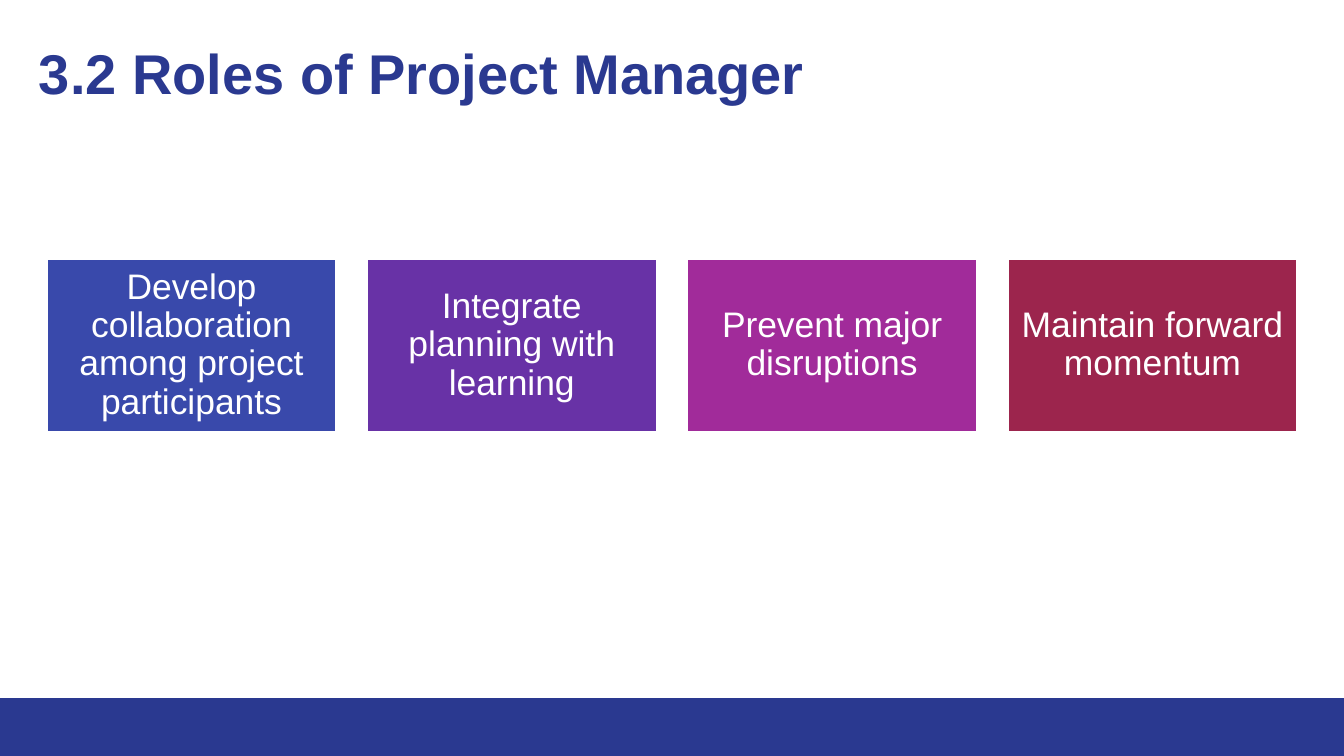
from typing import NamedTuple

from pptx import Presentation
from pptx import util as u
from pptx.dml.color import RGBColor
from pptx.enum import shapes, text

WIDE = 10
HIGH = WIDE * 9 / 16
NAVY, WHITE = "2A3990", "FFFFFF"
EDGE, CARD_W = 0.34, 2.17
FOOT_H = 0.43


class Role(NamedTuple):
    label: str
    fill: str


ROLES = [
    Role("Develop collaboration among project participants", "3949AB"),
    Role("Integrate planning with learning", "6832A6"),
    Role("Prevent major disruptions", "A12B9A"),
    Role("Maintain forward momentum", "9C254D"),
]


def paint(target, color: str) -> None:
    """Give a fill or a line one solid color."""
    target.solid()
    target.fore_color.rgb = RGBColor.from_string(color)


def add_box(slide, left: float, top: float, width: float, height: float, fill: str):
    box = slide.shapes.add_shape(
        shapes.MSO_SHAPE.RECTANGLE,
        u.Inches(left), u.Inches(top), u.Inches(width), u.Inches(height))
    box.shadow.inherit = False
    paint(box.fill, fill)
    box.line.fill.background()
    return box


def set_frame(frame, inset: float, anchor) -> None:
    frame.word_wrap = True
    frame.auto_size = text.MSO_AUTO_SIZE.NONE
    frame.vertical_anchor = anchor
    frame.margin_left = frame.margin_right = u.Inches(inset)
    frame.margin_top = frame.margin_bottom = u.Inches(inset)


def add_run(par, words: str, size: int, color: str, bold: bool = False) -> None:
    run = par.add_run()
    run.text = words
    run.font.name = "Arial"
    run.font.size = u.Pt(size)
    run.font.bold = bold
    paint(run.font.fill, color)


def add_title(slide, words: str) -> None:
    title = slide.shapes.title
    title.left, title.top = u.Inches(0.19), u.Inches(0.19)
    title.width, title.height = u.Inches(9.32), u.Inches(0.66)
    set_frame(title.text_frame, 0.1, text.MSO_ANCHOR.TOP)
    par = title.text_frame.paragraphs[0]
    par.alignment = text.PP_ALIGN.LEFT
    add_run(par, words, 30, NAVY, bold=True)


def add_card(slide, role: Role, left: float) -> None:
    card = add_box(slide, left, 1.92, CARD_W, 1.3, role.fill)
    paint(card.line.fill, WHITE)
    card.line.width = u.Pt(2)
    set_frame(card.text_frame, 0.08, text.MSO_ANCHOR.MIDDLE)
    par = card.text_frame.paragraphs[0]
    par.alignment = text.PP_ALIGN.CENTER
    par.line_spacing = 0.9
    add_run(par, role.label, 19, WHITE)


def main() -> None:
    deck = Presentation()
    deck.slide_width, deck.slide_height = u.Inches(WIDE), u.Inches(HIGH)
    slide = deck.slides.add_slide(deck.slide_layouts[5])
    paint(slide.background.fill, WHITE)
    add_box(slide, 0, HIGH - FOOT_H, WIDE, FOOT_H, NAVY)
    add_title(slide, "3.2 Roles of Project Manager")
    step = (WIDE - 2 * EDGE - CARD_W) / (len(ROLES) - 1)
    for i, role in enumerate(ROLES):
        add_card(slide, role, EDGE + i * step)
    deck.save("out.pptx")


if __name__ == "__main__":
    main()
